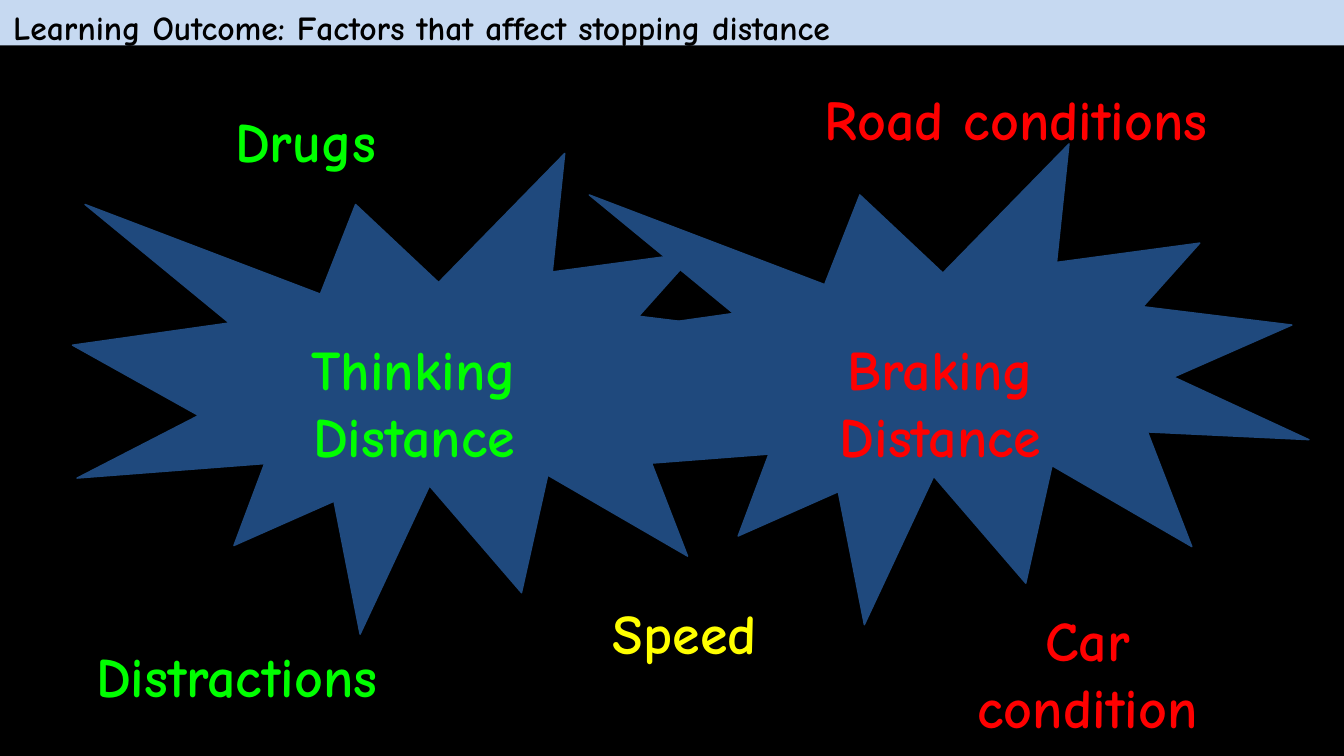
import pptx
import pptx.util
from pptx.dml.color import RGBColor
from pptx.enum.shapes import MSO_SHAPE
from pptx.enum.text import MSO_ANCHOR, MSO_AUTO_SIZE, PP_ALIGN

Cm = pptx.util.Cm
Pt = pptx.util.Pt

COLOURS = {
    "background": "000000",
    "banner": "C6D9F1",
    "banner text": "000000",
    "burst": "1F497D",
    "thinking": "00FF00",
    "braking": "FF0000",
    "both": "FFFF00",
}


def colour(name):
    return RGBColor.from_string(COLOURS[name])


def write(shape, text, size, ink, align, inset_y):
    frame = shape.text_frame
    frame.text = text
    frame_format = {
        "word_wrap": True,
        "auto_size": MSO_AUTO_SIZE.NONE,
        "vertical_anchor": MSO_ANCHOR.TOP,
        "margin_left": Cm(0.25),
        "margin_right": Cm(0.25),
        "margin_top": Cm(inset_y),
        "margin_bottom": Cm(inset_y),
    }
    for key, value in frame_format.items():
        setattr(frame, key, value)
    paragraph = frame.paragraphs[0]
    paragraph.alignment = align
    font = paragraph.runs[0].font
    for key, value in {"name": "Comic Neue", "size": Pt(size), "bold": True}.items():
        setattr(font, key, value)
    font.color.rgb = colour(ink)


# Slide on a black background
deck = pptx.Presentation()
deck.slide_width, deck.slide_height = Cm(25.4), Cm(14.29)
slide = deck.slides.add_slide(deck.slide_layouts[5])
slide.background.fill.solid()
slide.background.fill.fore_color.rgb = colour("background")

# Learning outcome banner
banner = slide.shapes.title
banner_place = {"left": 0, "top": 0, "width": deck.slide_width, "height": Cm(0.86)}
for key, value in banner_place.items():
    setattr(banner, key, value)
banner.fill.solid()
banner.fill.fore_color.rgb = colour("banner")
write(banner, "Learning Outcome: Factors that affect stopping distance",
      18, "banner text", PP_ALIGN.LEFT, 0.13)

# Overlapping bursts behind the two kinds of distance
for left, top in [(1.37, 2.9), (10.9, 2.72)]:
    burst = slide.shapes.add_shape(
        MSO_SHAPE.EXPLOSION1, Cm(left), Cm(top), Cm(13.84), Cm(9.09))
    burst.shadow.inherit = False
    burst.fill.solid()
    burst.fill.fore_color.rgb = colour("burst")
    burst.line.color.rgb = colour("burst")
    burst.line.width = Pt(0.75)

# Distances and the factors around them: text, kind, left, top, width, height
# The two-line car label is tall enough for both lines and ends above the slide edge
labels = [
    ("Thinking Distance", "thinking", 4.27, 6.07, 7.11, 2.69),
    ("Braking Distance", "braking", 14.22, 6.07, 7.11, 2.69),
    ("Drugs", "thinking", 3.26, 1.76, 5.03, 1.45),
    ("Distractions", "thinking", 0.92, 11.87, 7.11, 1.45),
    ("Road conditions", "braking", 14.53, 1.35, 9.35, 1.45),
    ("Car condition", "braking", 17.76, 11.2, 5.59, 3.05),
    ("Speed", "both", 9.39, 11.07, 7.11, 1.45),
]
for text, kind, *place in labels:
    label = slide.shapes.add_textbox(*map(Cm, place))
    write(label, text, 30, kind, PP_ALIGN.CENTER, 0.25)

deck.save("out.pptx")
